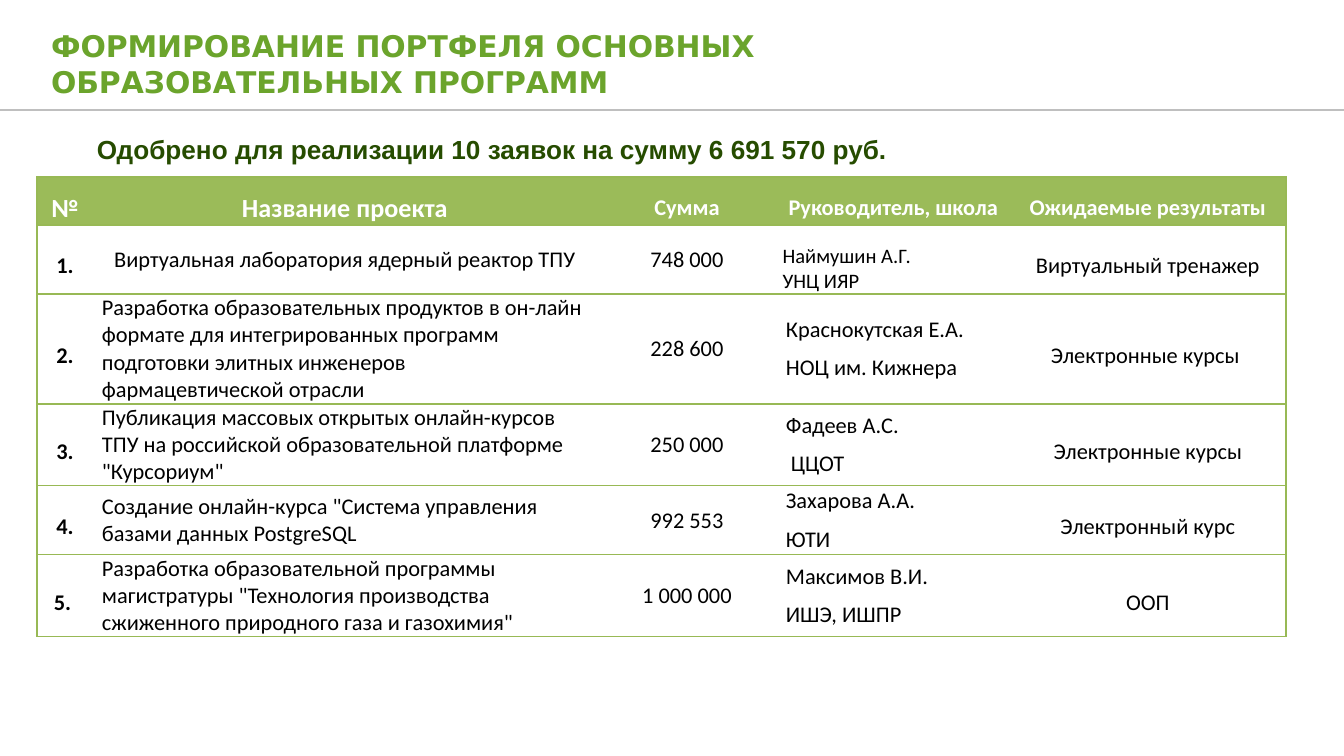
from lxml import etree
from pptx import Presentation
from pptx.dml.color import RGBColor
from pptx.enum.shapes import MSO_CONNECTOR
from pptx.enum.text import MSO_ANCHOR, PP_ALIGN
from pptx.oxml.ns import qn
from pptx.util import Pt

LEFT, CENTER = PP_ALIGN.LEFT, PP_ALIGN.CENTER
MIDDLE, BOTTOM, TOP = MSO_ANCHOR.MIDDLE, MSO_ANCHOR.BOTTOM, MSO_ANCHOR.TOP
STRAIGHT = MSO_CONNECTOR.STRAIGHT

EMU_PER_PX = 914400 / 134.4
SLIDE_W, SLIDE_H = 1344, 756

COLORS = {
    "title": "6BA42C",
    "summary": "264C00",
    "rule": "BFBFBF",
    "header": "9BBB59",
    "border": "98B955",
    "white": "FFFFFF",
    "black": "000000",
}

COLUMN_WIDTHS = [56, 504, 180, 233, 276]
ROW_HEIGHTS = [48, 69, 110, 82, 69, 82]
HEADINGS = ["№", "Название проекта", "Сумма", "Руководитель, школа", "Ожидаемые результаты"]
PROJECTS = [
    ("1.", "Виртуальная лаборатория ядерный реактор ТПУ", "748 000",
     " Наймушин А.Г.\n УНЦ ИЯР", "Виртуальный тренажер"),
    ("2.", "Разработка образовательных продуктов в он-лайн формате для интегрированных "
     "программ подготовки элитных инженеров фармацевтической отрасли", "228 600",
     "Краснокутская Е.А.\nНОЦ им. Кижнера", "Электронные курсы "),
    ("3.", "Публикация массовых открытых онлайн-курсов ТПУ на российской образовательной "
     "платформе \"Курсориум\"", "250 000", "Фадеев А.С.\n ЦЦОТ", "Электронные курсы"),
    ("4.", "Создание онлайн-курса \"Система управления базами данных PostgreSQL", "992 553",
     "Захарова А.А.\nЮТИ", "Электронный курс"),
    ("5. ", "Разработка образовательной программы магистратуры \"Технология производства "
     "сжиженного природного газа и газохимия\"", "1 000 000",
     "Максимов В.И.\nИШЭ, ИШПР", "ООП"),
]


def px(length):
    return round(length * EMU_PER_PX)


def rgb(name):
    return RGBColor.from_string(COLORS[name])


def write(frame, text, size=12, font="Calibri", color="black", bold=False,
          align=LEFT, spacing=1.0, after=0):
    """Fill a text frame, one paragraph for each line of text."""
    frame.word_wrap = True
    for i, line in enumerate(text.split("\n")):
        paragraph = frame.paragraphs[0] if i == 0 else frame.add_paragraph()
        paragraph.alignment = align
        paragraph.line_spacing = spacing
        paragraph.space_after = Pt(after)
        run = paragraph.add_run()
        run.text = line
        run.font.size = Pt(size)
        run.font.name = font
        run.font.bold = bold
        run.font.color.rgb = rgb(color)


def set_insets(target, left, top, right, bottom):
    target.margin_left, target.margin_top = px(left), px(top)
    target.margin_right, target.margin_bottom = px(right), px(bottom)


def set_borders(cell, sides):
    """Draw the given sides (L, R, T, B) and clear the others."""
    properties = cell._tc.get_or_add_tcPr()
    for i, side in enumerate("LRTB"):
        border = etree.Element(qn(f"a:ln{side}"), w=str(Pt(0.75)))
        if side in sides:
            fill = etree.SubElement(border, qn("a:solidFill"))
            etree.SubElement(fill, qn("a:srgbClr"), val=COLORS["border"])
        else:
            etree.SubElement(border, qn("a:noFill"))
        properties.insert(i, border)


def add_text(slide, box, text, anchor, indent=13, **text_format):
    frame = slide.shapes.add_textbox(*map(px, box)).text_frame
    set_insets(frame, indent, 7, 13, 7)
    frame.vertical_anchor = anchor
    write(frame, text, **text_format)


def add_heading(slide, left, top, width, height):
    # Title
    add_text(slide, (left + 38, top + 28, 931, 71),
             "ФОРМИРОВАНИЕ ПОРТФЕЛЯ ОСНОВНЫХ ОБРАЗОВАТЕЛЬНЫХ ПРОГРАММ",
             MIDDLE, size=16, font="DejaVu Sans", color="title", bold=True)
    # Rule along the lower edge
    bottom = px(top + height)
    rule = slide.shapes.add_connector(STRAIGHT, px(left + width), bottom, px(left), bottom)
    rule.line.color.rgb = rgb("rule")
    rule.line.width = Pt(1)
    etree.SubElement(rule._element.spPr, qn("a:effectLst"))


def cell_format(row, column):
    if row == 0:
        return dict(size=14 if column < 2 else 12, color="white", bold=True,
                    align=CENTER, spacing=1.5, after=6)
    if (row, column) == (1, 3):
        return dict(size=11)
    left_aligned = column == 3 or (column == 1 and row > 1)
    return dict(bold=column == 0, align=LEFT if left_aligned else CENTER,
                spacing=1.5 if column in (0, 4) else 1.0, after=6)


def add_projects(slide, left, top):
    rows = [HEADINGS, *PROJECTS]
    last_column = len(HEADINGS) - 1
    table = slide.shapes.add_table(
        len(rows), len(HEADINGS), px(left), px(top),
        px(sum(COLUMN_WIDTHS)), px(sum(ROW_HEIGHTS))).table
    for column, width in zip(table.columns, COLUMN_WIDTHS):
        column.width = px(width)
    for row, height in zip(table.rows, ROW_HEIGHTS):
        row.height = px(height)

    for r, texts in enumerate(rows):
        for c, text in enumerate(texts):
            cell = table.cell(r, c)
            is_first_leader = (r, c) == (1, 3)
            set_insets(cell, *((1, 1, 1, 0) if is_first_leader else (9, 0, 9, 0)))
            cell.vertical_anchor = BOTTOM if is_first_leader else MIDDLE
            if r == 0:
                cell.fill.solid()
                cell.fill.fore_color.rgb = rgb("header")
            else:
                cell.fill.background()
            sides = "TB" + ("L" if c == 0 else "") + ("R" if c == last_column else "")
            set_borders(cell, sides)
            write(cell.text_frame, text, **cell_format(r, c))


def main():
    presentation = Presentation()
    presentation.slide_width, presentation.slide_height = px(SLIDE_W), px(SLIDE_H)
    slide = presentation.slides.add_slide(presentation.slide_layouts[6])
    add_heading(slide, 0, 0, SLIDE_W, 110)
    add_projects(slide, 37, 177)
    # Approved total above the table
    add_text(slide, (16, 126, 1270, 46),
             "Одобрено для реализации 10 заявок на сумму 6 691 570 руб.",
             TOP, indent=81, size=14, font="Arial", color="summary", bold=True)
    presentation.save("out.pptx")


if __name__ == "__main__":
    main()
